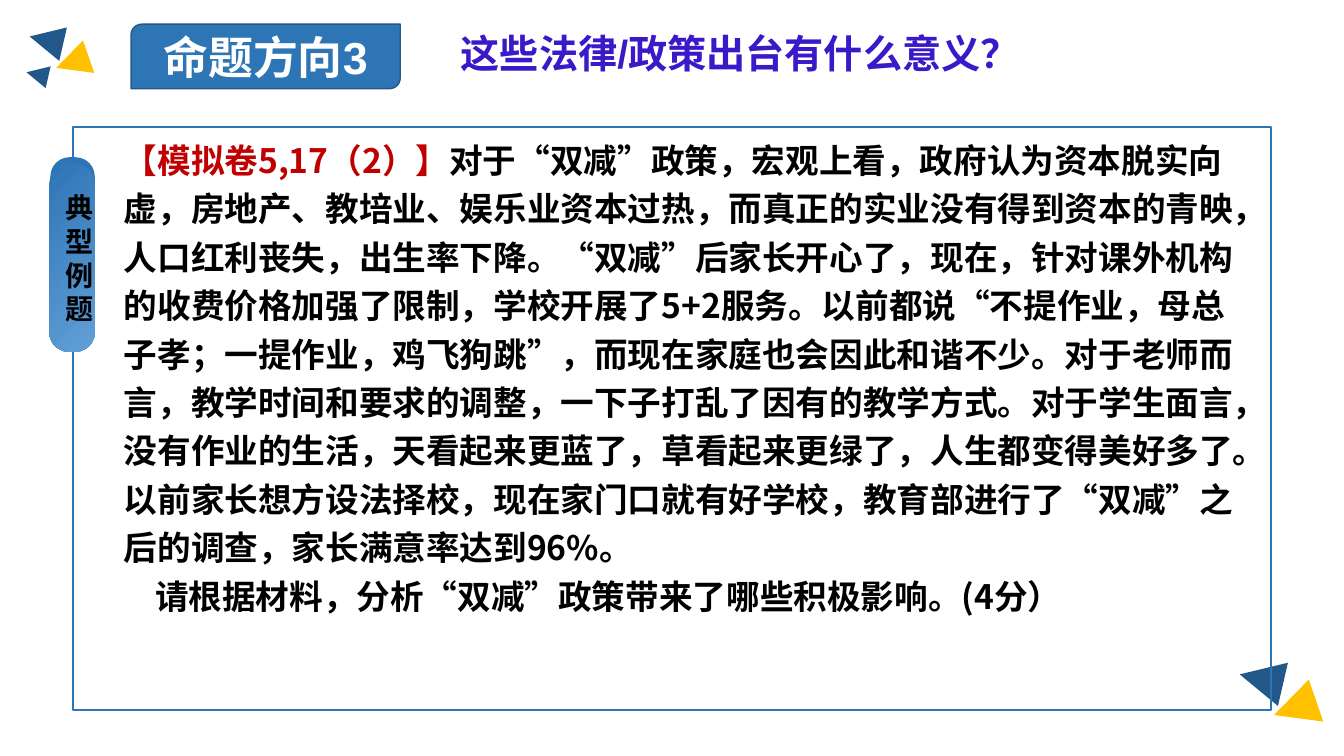
import pptx
import pptx.util
import pptx.dml.color
import pptx.enum.shapes
import pptx.enum.text
import lxml.etree

Inches = pptx.util.Inches
Pt = pptx.util.Pt
KIND = pptx.enum.shapes.MSO_SHAPE
ALIGN = pptx.enum.text.PP_ALIGN
ANCHOR = pptx.enum.text.MSO_ANCHOR
FIT = pptx.enum.text.MSO_AUTO_SIZE

HUES = {
    "blue": "2E75B6", "light": "619FD7", "navy": "225889", "edge": "225787",
    "gold": "FFC000", "violet": "3A19C9", "red": "C00000",
    "black": "000000", "white": "FFFFFF",
}
SANS = "Noto Sans CJK SC"

SOURCE = "【模拟卷5,17（2）】"
STORY = (
    "对于“双减”政策，宏观上看，政府认为资本脱实向虚，房地产、教培业、娱乐业资本过热，"
    "而真正的实业没有得到资本的青映，人口红利丧失，出生率下降。“双减”后家长开心了，现在，"
    "针对课外机构的收费价格加强了限制，学校开展了5+2服务。以前都说“不提作业，母总子孝；"
    "一提作业，鸡飞狗跳”，而现在家庭也会因此和谐不少。对于老师而言，教学时间和要求的调整，"
    "一下子打乱了因有的教学方式。对于学生面言，没有作业的生活，天看起来更蓝了，"
    "草看起来更绿了，人生都变得美好多了。以前家长想方设法择校，现在家门口就有好学校，"
    "教育部进行了“双减”之后的调查，家长满意率达到96%。"
)
TASK = "请根据材料，分析“双减”政策带来了哪些积极影响。(4分）"


def hue(name):
    return pptx.dml.color.RGBColor.from_string(HUES[name])


def add_run(para, text, size, color, face="Arial"):
    run = para.add_run()
    run.text = text
    font = run.font
    font.size = Pt(size)
    font.bold = True
    font.name = face
    font.color.rgb = hue(color)
    east = lxml.etree.SubElement(
        run._r.get_or_add_rPr(), pptx.oxml.ns.qn("a:ea"))
    east.set("typeface", SANS)


def add_form(slide, kind, box, fill=None, line=None, width=1):
    form = slide.shapes.add_shape(kind, *map(Inches, box))
    form.shadow.inherit = False
    if fill:
        form.fill.solid()
        form.fill.fore_color.rgb = hue(fill)
    else:
        form.fill.background()
    if line:
        form.line.color.rgb = hue(line)
        form.line.width = Pt(width)
    else:
        form.line.fill.background()
    return form


def add_label(form, text, size, color):
    frame = form.text_frame
    frame.word_wrap = True
    frame.vertical_anchor = ANCHOR.MIDDLE
    para = frame.paragraphs[0]
    para.alignment = ALIGN.CENTER
    add_run(para, text, size, color)


def add_corner(slide, left, top, side, small=False):
    parts = [(0.76, 0.64, 1, 251, "gold"), (0, 0, 1, 283, "navy")]
    if small:
        parts.append((-0.09, 1.18, 0.65, 283, "navy"))
    for right, down, scale, turn, color in parts:
        size = side * scale
        box = (left + right * side, top + down * side, size, size)
        form = add_form(slide, KIND.ISOSCELES_TRIANGLE, box, color)
        form.rotation = turn


def add_head(slide, left, top):
    badge = add_form(slide, KIND.ROUND_2_DIAG_RECTANGLE,
                     (left, top, 2.67, 0.64), "blue", "edge")
    add_label(badge, "命题方向3", 32, "white")
    title = slide.shapes.title
    title.left, title.top = Inches(left + 3.17), Inches(top)
    title.width, title.height = Inches(8.28), Inches(0.57)
    frame = title.text_frame
    frame.word_wrap = True
    frame.auto_size = FIT.SHAPE_TO_FIT_TEXT
    frame.vertical_anchor = ANCHOR.TOP
    para = frame.paragraphs[0]
    para.alignment = ALIGN.LEFT
    add_run(para, "这些法律/政策出台有什么意义？", 28, "violet")


def add_tab(slide, left, top):
    back = add_form(slide, KIND.ROUNDED_RECTANGLE,
                    (left + 0.01, top - 0.07, 0.44, 1.68), "blue")
    front = add_form(slide, KIND.ROUNDED_RECTANGLE,
                     (left, top, 0.45, 1.86))
    for form in (back, front):
        form.adjustments[0] = 0.43
    front.fill.gradient()
    front.fill.gradient_angle = 315
    for stop, color, place in zip(
            front.fill.gradient_stops, ("blue", "light"), (0, 1)):
        stop.color.rgb = hue(color)
        stop.position = place
    add_label(front, "典型例题", 20, "black")


def add_body(slide, left, top, width, height):
    area = slide.shapes.add_textbox(
        *map(Inches, (left + 0.41, top, width - 0.55, height - 0.83)))
    frame = area.text_frame
    frame.word_wrap = True
    frame.auto_size = FIT.SHAPE_TO_FIT_TEXT
    story = frame.paragraphs[0]
    add_run(story, SOURCE, 24, "red", SANS)
    add_run(story, STORY, 24, "black", SANS)
    task = frame.add_paragraph()
    task._p.get_or_add_pPr().set("indent", str(Inches(0.31)))
    add_run(task, TASK, 24, "black", SANS)
    for para in frame.paragraphs:
        para.line_spacing = 1.2


def main():
    deck = pptx.Presentation()
    deck.slide_width, deck.slide_height = Inches(13.33), Inches(7.5)
    slide = deck.slides.add_slide(deck.slide_layouts[5])
    panel = (0.72, 1.26, 11.89, 5.78)
    add_corner(slide, 12.29, 6.52, 0.44)
    add_corner(slide, 0.29, 0.23, 0.34, small=True)
    add_form(slide, KIND.RECTANGLE, panel, line="blue", width=1.5)
    add_tab(slide, 0.49, 1.63)
    add_head(slide, 1.3, 0.24)
    add_body(slide, *panel)
    deck.save("out.pptx")


if __name__ == "__main__":
    main()
